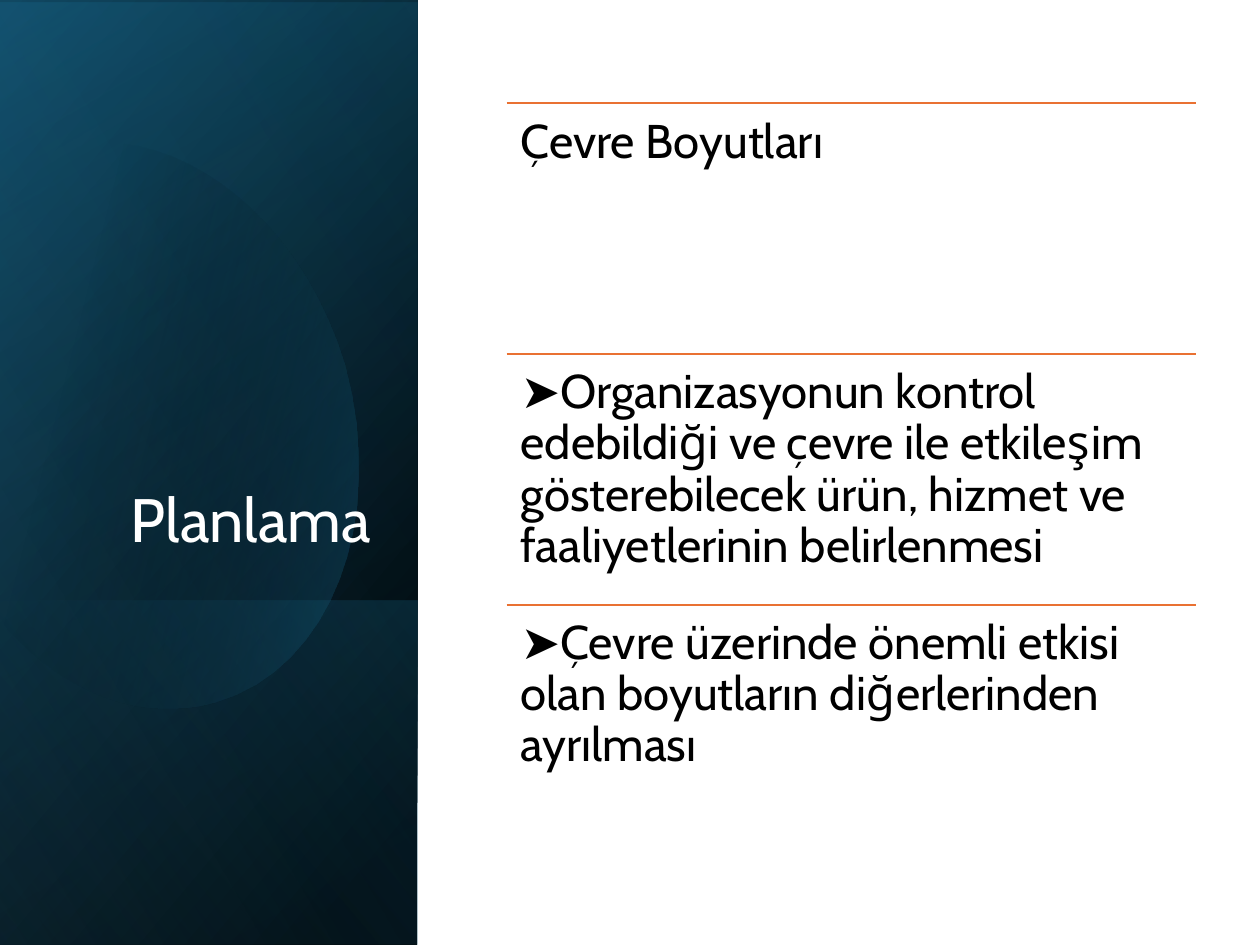
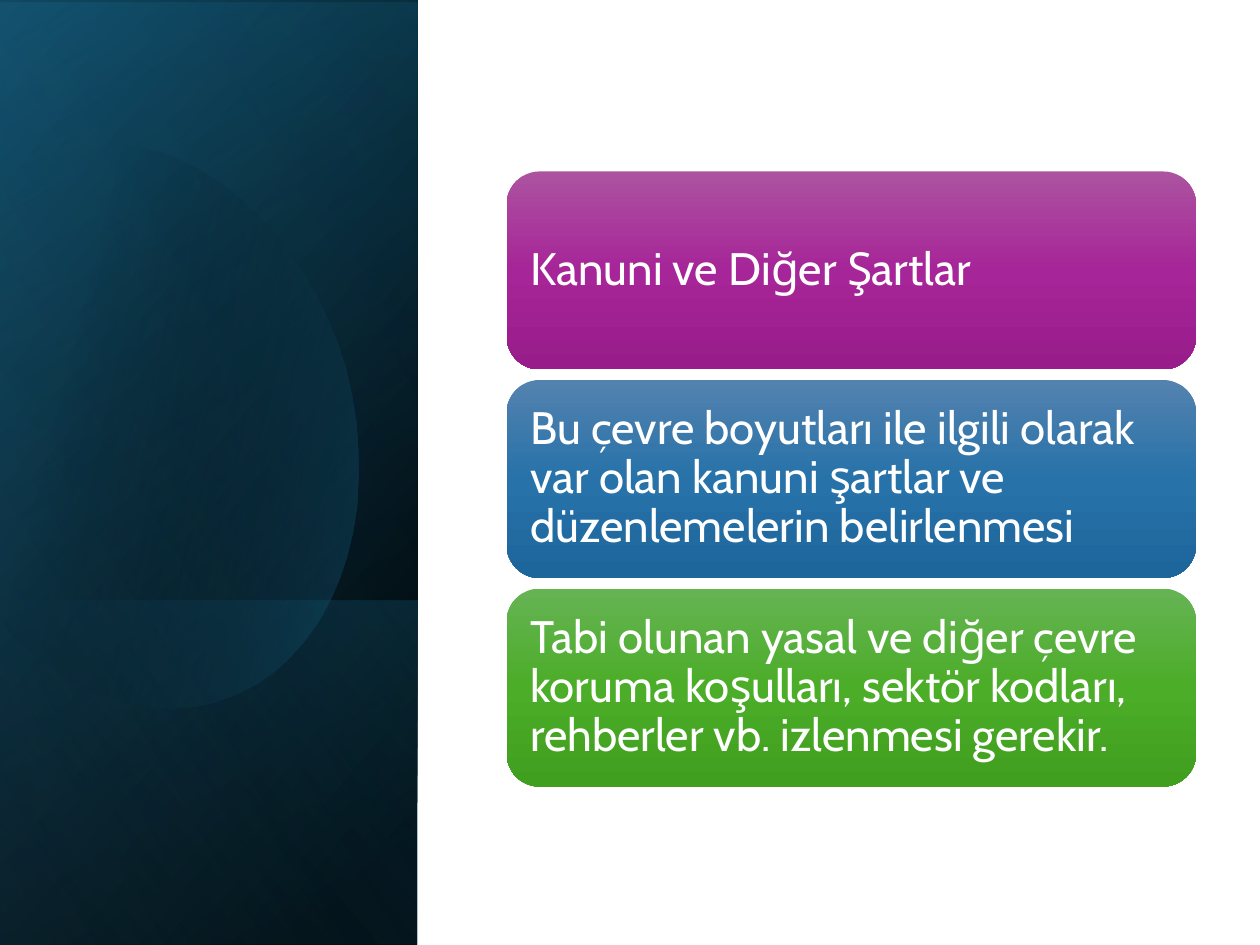
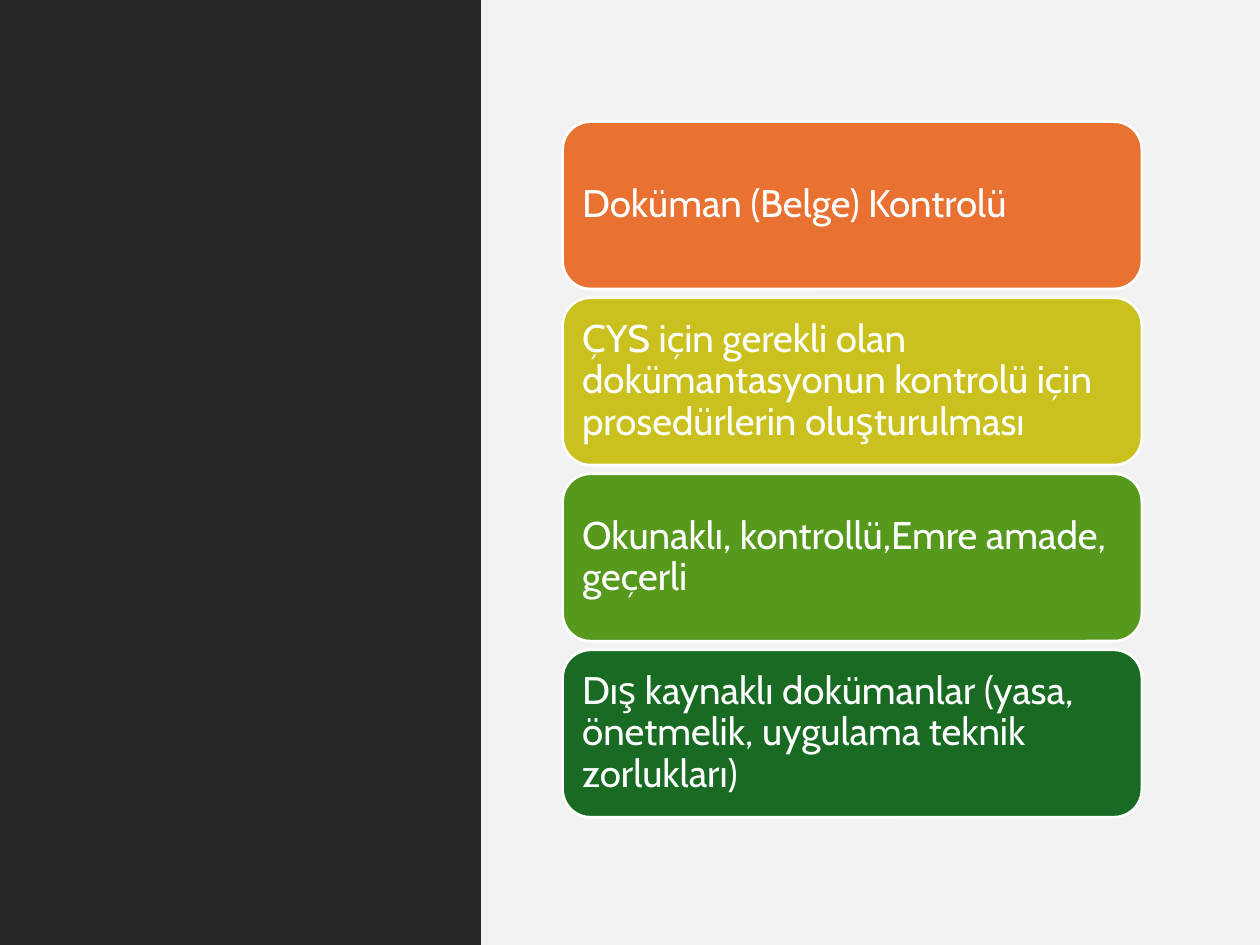
from lxml import etree
from pptx import Presentation
from pptx.dml.color import RGBColor
from pptx.enum.shapes import MSO_CONNECTOR, MSO_SHAPE
from pptx.enum.text import MSO_ANCHOR, PP_ALIGN
from pptx.oxml.ns import qn
from pptx.util import Pt

RECT, ROUND = MSO_SHAPE.RECTANGLE, MSO_SHAPE.ROUNDED_RECTANGLE
LINE = MSO_CONNECTOR.STRAIGHT
TOP, MIDDLE, BOTTOM = MSO_ANCHOR.TOP, MSO_ANCHOR.MIDDLE, MSO_ANCHOR.BOTTOM
LEFT, RIGHT = PP_ALIGN.LEFT, PP_ALIGN.RIGHT

FONT = "Cabin"
WIDE, HIGH = 720, 540
SIDE = 238.5
HUES = {
    "white": "FFFFFF", "black": "000000", "coal": "262626", "mist": "F2F2F2",
    "navy": "104862", "teal": "156082", "sky": "46B1E1",
    "orange": "E97132", "olive": "CBC11E", "green": "56991D", "forest": "196B24",
    "plum1": "AC53A0", "plum2": "A62598", "plum3": "991C8B",
    "blue1": "5382AF", "blue2": "2772A9", "blue3": "1D669C",
    "leaf1": "66B354", "leaf2": "4BAD28", "leaf3": "409F1E",
}

# Stops are (position, hue, opacity), all in percent
BASE = [(8, "black", 100), (100, "navy", 100)], 50
VEIL = [(0, "black", 0), (99, "teal", 46)], 30
FOOT = [(2, "teal", 29), (100, "black", 30)], 130
GLOW = [(0, "black", 0), (99, "sky", 11)], 120
BLOB = [(29, "black", 0), (100, "teal", 43)], 14

BLOB_START = (69, 82)
BLOB_PARTS = [
    [(123, 88), (176, 138), (197, 209)],
    [(221, 297), (189, 382), (123, 401)],
    [(82, 413), (38, 396), (5, 360)],
    [(-2, 351)], [(-18, 120)], [(-11, 111)],
    [(1, 99), (16, 90), (32, 85)],
    [(45, 81), (57, 81), (69, 82)],
]

ASPECTS = [
    "Çevre Boyutları",
    "➤Organizasyonun kontrol edebildiği ve çevre ile etkileşim "
    "gösterebilecek ürün, hizmet ve faaliyetlerinin belirlenmesi",
    "➤Çevre üzerinde önemli etkisi olan boyutların diğerlerinden ayrılması",
]
TERMS = [
    ("plum", "Kanuni ve Diğer Şartlar"),
    ("blue", "Bu çevre boyutları ile ilgili olarak var olan kanuni şartlar ve "
             "düzenlemelerin belirlenmesi"),
    ("leaf", "Tabi olunan yasal ve diğer çevre koruma koşulları, sektör kodları, "
             "rehberler vb. izlenmesi gerekir."),
]
PAPERS = [
    ("orange", "Doküman (Belge) Kontrolü"),
    ("olive", "ÇYS için gerekli olan dokümantasyonun kontrolü için "
              "prosedürlerin oluşturulması"),
    ("green", "Okunaklı, kontrollü,Emre amade, geçerli"),
    ("forest", "Dış kaynaklı dokümanlar (yasa, önetmelik, uygulama teknik "
               "zorlukları)"),
]


def rgb(hue):
    return RGBColor.from_string(HUES[hue])


def blend(shape, stops, angle):
    """Fill a shape with a linear gradient that may be see-through."""
    grad = etree.Element(qn("a:gradFill"), rotWithShape="1")
    items = etree.SubElement(grad, qn("a:gsLst"))
    for place, hue, alpha in stops:
        stop = etree.SubElement(items, qn("a:gs"), pos=str(place * 1000))
        tone = etree.SubElement(stop, qn("a:srgbClr"), val=HUES[hue])
        if alpha < 100:
            etree.SubElement(tone, qn("a:alpha"), val=str(alpha * 1000))
    etree.SubElement(grad, qn("a:lin"), ang=str(angle * 60000), scaled="0")
    props = shape._element.spPr
    outline = props.find(qn("a:ln"))
    outline.addprevious(grad)


def plain(shape):
    shape.shadow.inherit = False
    shape.line.fill.background()
    return shape


def block(slide, kind, box, hue=None):
    shape = plain(slide.shapes.add_shape(kind, *map(Pt, box)))
    if hue:
        shape.fill.solid()
        shape.fill.fore_color.rgb = rgb(hue)
    return shape


def turned(slide, box, stops, angle):
    """Cover the box with a mirrored rectangle turned by a quarter."""
    x, y, w, h = box
    shape = block(slide, RECT, (x + (w - h) / 2, y + (h - w) / 2, h, w))
    shape.rotation = 90
    shape._element.spPr.find(qn("a:xfrm")).set("flipH", "1")
    blend(shape, stops, angle)


def curve(start, one, two, end, steps=16):
    for step in range(1, steps + 1):
        t = step / steps
        s = 1 - t
        yield tuple(s**3 * a + 3 * s * s * t * b + 3 * s * t * t * c + t**3 * d
                    for a, b, c, d in zip(start, one, two, end))


def blob(slide, left, top):
    points = [BLOB_START]
    for part in BLOB_PARTS:
        points += curve(points[-1], *part) if len(part) == 3 else part
    spots = [((left + x) * 100, (top + y) * 100) for x, y in points]
    pen = slide.shapes.build_freeform(*spots[0], scale=Pt(0.01))
    pen.add_line_segments(spots[1:], close=True)
    blend(plain(pen.convert_to_shape()), *BLOB)


def panel(slide, box):
    """Draw the dark, layered band on the left."""
    x, y, w, h = box
    turned(slide, box, *BASE)
    turned(slide, (x, y + 1.5, w, h), *VEIL)
    turned(slide, (x, y + 343, w, 197), *FOOT)
    blob(slide, x, y)
    turned(slide, box, *GLOW)


def write(shape, text, size, hue, anchor, pad, align=LEFT):
    frame = shape.text_frame
    frame.word_wrap = True
    frame.vertical_anchor = anchor
    frame.margin_left = frame.margin_right = Pt(pad)
    frame.margin_top = frame.margin_bottom = Pt(pad)
    para = frame.paragraphs[0]
    para.text = text
    para.alignment = align
    para.line_spacing = 0.9
    para.font.name = FONT
    para.font.size = Pt(size)
    para.font.color.rgb = rgb(hue)


def title(slide, text, box):
    shape = slide.shapes.add_textbox(*map(Pt, box))
    write(shape, text, 35, "white", BOTTOM, 3.6, RIGHT)
    shape.text_frame.margin_left = shape.text_frame.margin_right = Pt(7.2)


def rows(slide, box, texts):
    """Stack texts of equal height, each under a thin rule."""
    x, y, w, h = box
    step = h / len(texts)
    for i, text in enumerate(texts):
        top = y + i * step
        rule = slide.shapes.add_connector(LINE, *map(Pt, (x, top, x + w, top)))
        rule.line.color.rgb = rgb("orange")
        rule.line.width = Pt(1)
        etree.SubElement(rule._element.spPr, qn("a:effectLst"))
        area = slide.shapes.add_textbox(*map(Pt, (x, top, w, step)))
        write(area, text, 27, "black", TOP, 8)


def cards(slide, box, items, gap, size, pad, paint):
    """Stack rounded cards of equal height; paint colours each one."""
    x, y, w, h = box
    tall = (h - gap * (len(items) - 1)) / len(items)
    for i, (hue, text) in enumerate(items):
        card = block(slide, ROUND, (x, y + i * (tall + gap), w, tall))
        paint(card, hue)
        write(card, text, size, "white", MIDDLE, pad)


def glossy(card, hue):
    blend(card, [(0, hue + "1", 100), (50, hue + "2", 100), (100, hue + "3", 100)], 90)


def flat(card, hue):
    card.fill.solid()
    card.fill.fore_color.rgb = rgb(hue)
    card.line.color.rgb = rgb("white")
    card.line.width = Pt(1.5)


def main():
    deck = Presentation()
    deck.slide_width, deck.slide_height = Pt(WIDE), Pt(HIGH)
    plan, law, paper = [deck.slides.add_slide(deck.slide_layouts[6]) for _ in range(3)]

    panel(plan, (0, 0, SIDE, HIGH))
    title(plan, "Planlama", (34.5, 132.5, 184.5, 188.5))
    rows(plan, (289.5, 59, 394, 430), ASPECTS)

    panel(law, (0, 0, SIDE, HIGH))
    cards(law, (289.5, 98, 394, 351.5), TERMS, 6, 26, 8, glossy)

    split = 275
    block(paper, RECT, (0, 0, split, HIGH), "coal")
    block(paper, RECT, (split, 0, WIDE - split, HIGH), "mist")
    cards(paper, (321.5, 69.5, 331, 397.5), PAPERS, 5, 22, 6.5, flat)

    deck.save("out.pptx")


if __name__ == "__main__":
    main()
